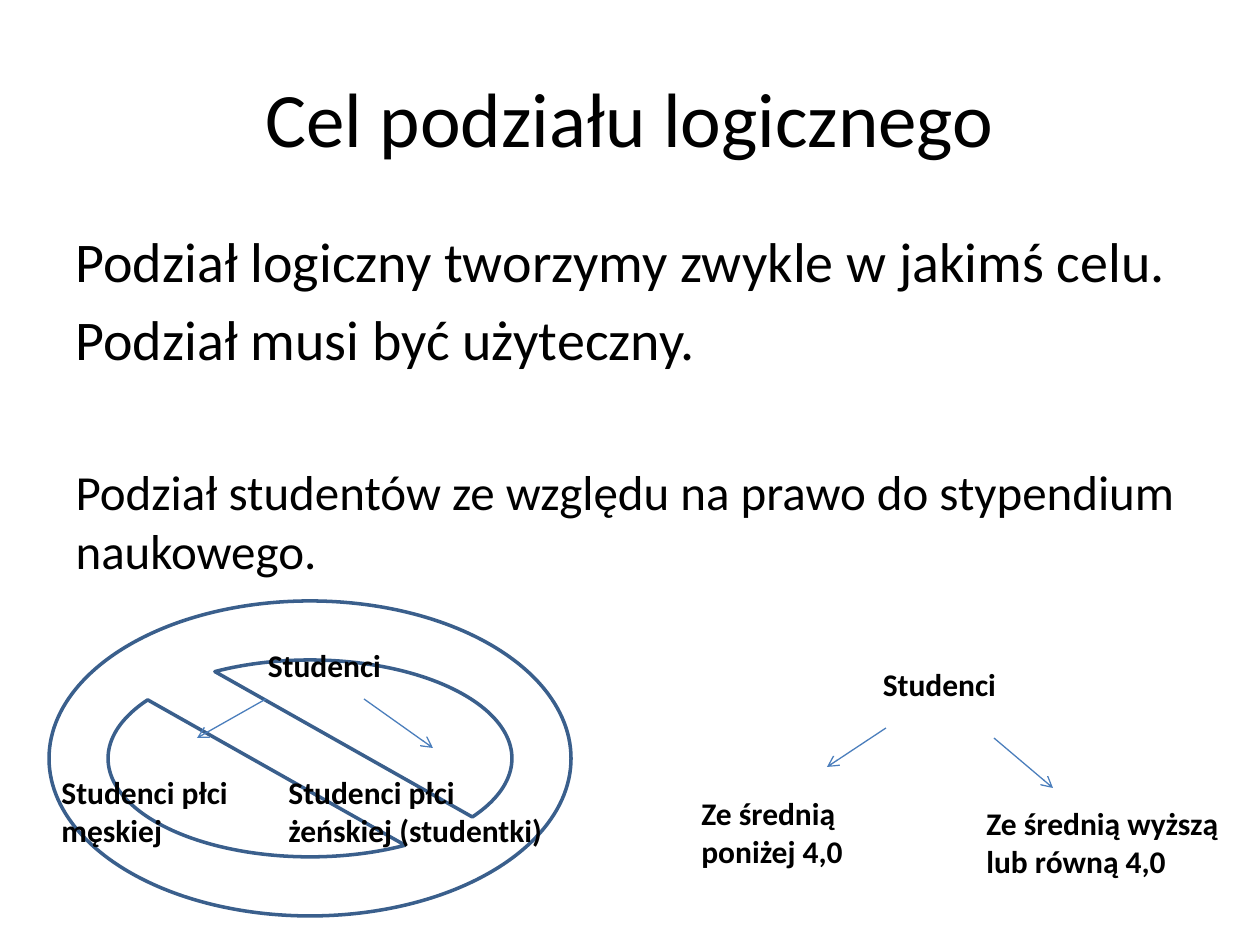
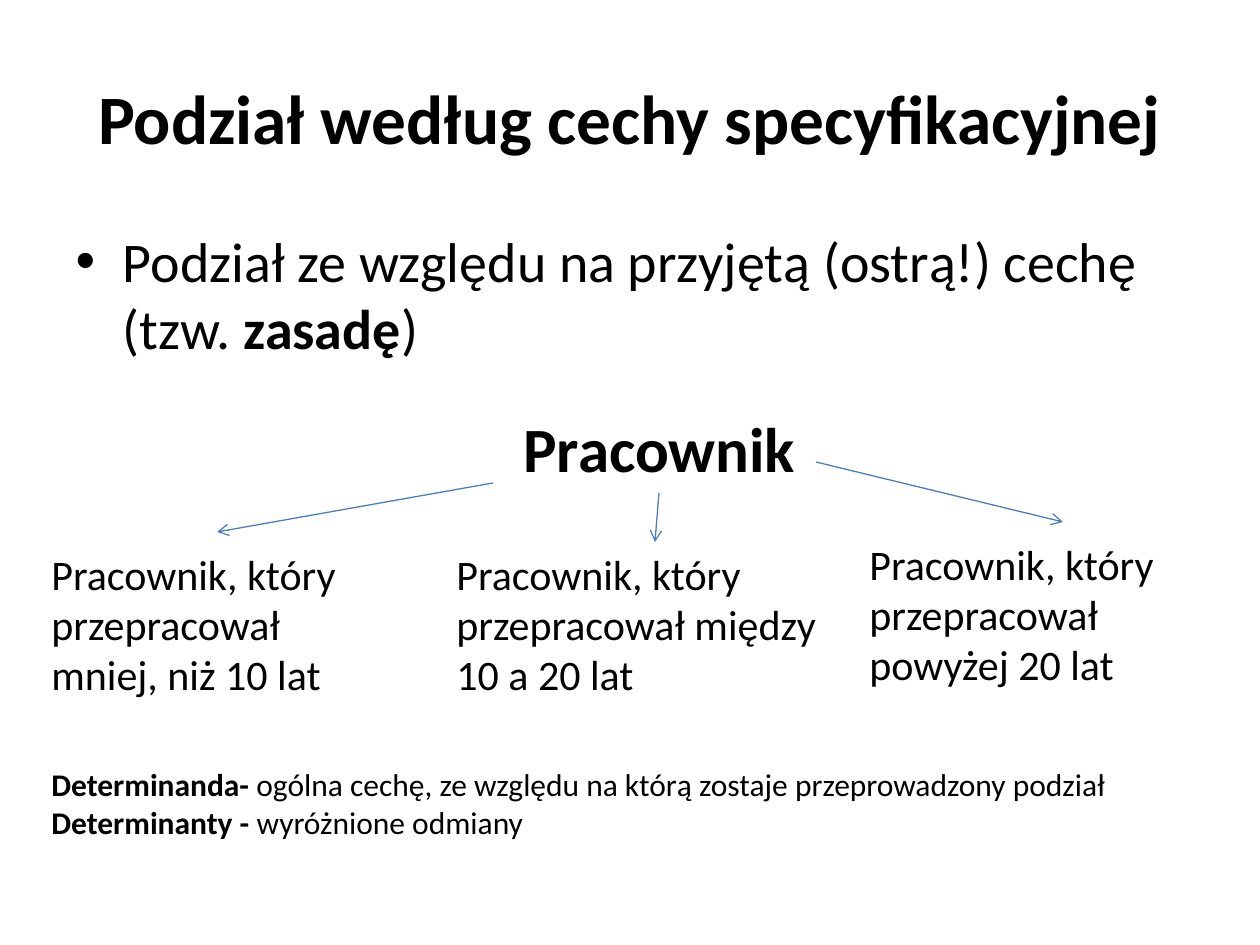
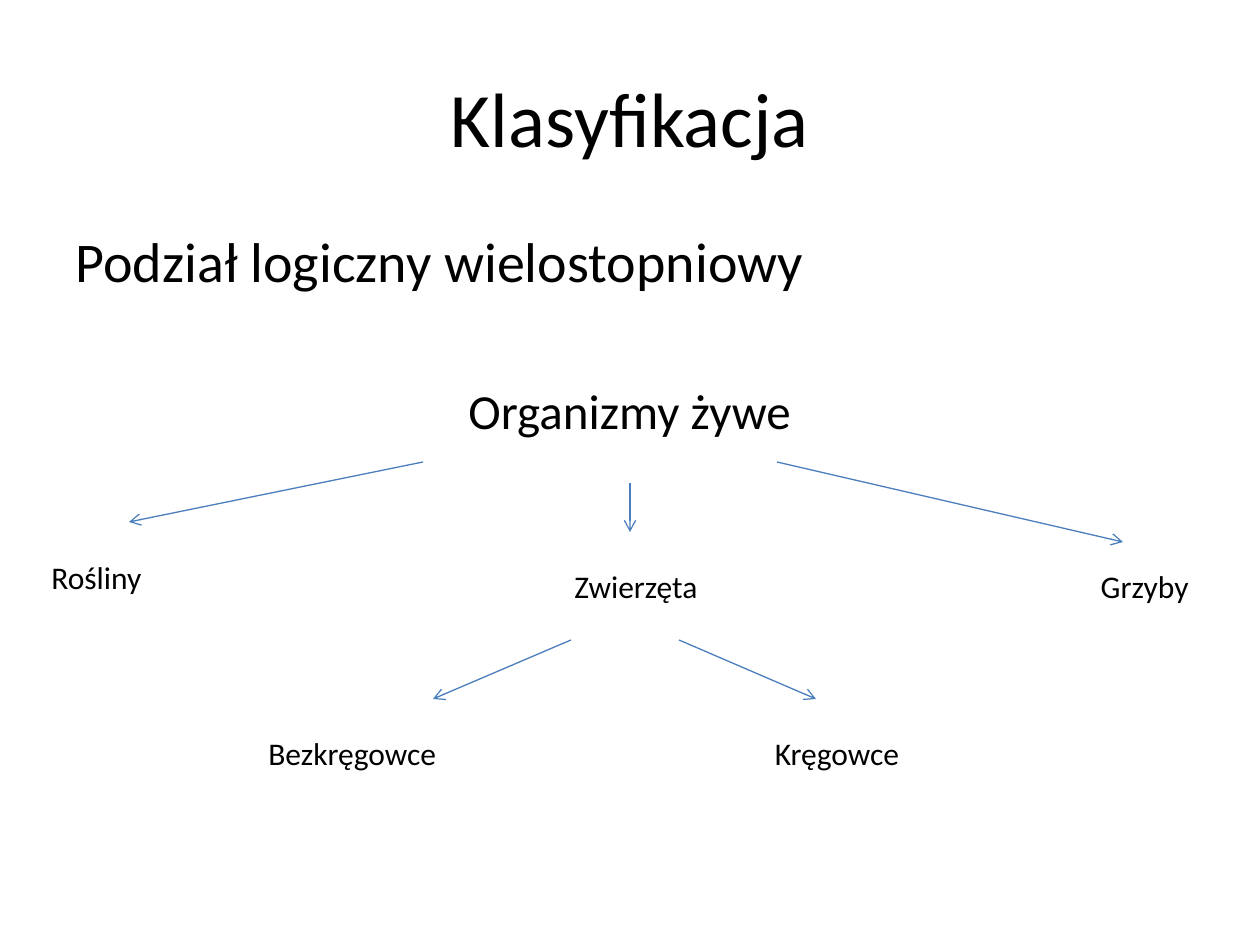
from lxml.etree import SubElement
from pptx import Presentation
from pptx.dml.color import RGBColor
from pptx.enum.shapes import MSO_CONNECTOR, MSO_SHAPE
from pptx.enum.text import MSO_ANCHOR, MSO_AUTO_SIZE, PP_ALIGN
from pptx.oxml.ns import qn
from pptx.util import Emu, Pt

FONT = "Calibri"
BLACK = RGBColor(0x00, 0x00, 0x00)
WHITE = RGBColor(0xFF, 0xFF, 0xFF)
ARROW_BLUE = RGBColor(0x4B, 0x7E, 0xBC)
SIGN_BLUE = RGBColor(0x3A, 0x5F, 0x8C)
PIXELS_PER_INCH = 126
TITLE_BOX = (63, 38, 1134, 157)
BODY_BOX = (63, 220, 1134, 624)


def px(length):
    """Turn whole pixels into EMU."""
    return Emu(round(length * 914400 / PIXELS_PER_INCH))


def place(shape, box):
    """Move and size a shape to a pixel box."""
    shape.left, shape.top, shape.width, shape.height = map(px, box)


def add_runs(paragraph, runs, size):
    """Add (text, bold) runs to a paragraph."""
    for text, bold in runs:
        run = paragraph.add_run()
        run.text = text
        font = run.font
        font.name, font.size, font.bold = FONT, Pt(size), bold
        font.color.rgb = BLACK


def add_lines(text_frame, lines, size, alignment=PP_ALIGN.LEFT):
    """Fill a text frame with one paragraph for each list of runs."""
    for index, runs in enumerate(lines):
        paragraph = text_frame.add_paragraph() if index else text_frame.paragraphs[0]
        paragraph.alignment = alignment
        add_runs(paragraph, runs, size)


def add_slide(presentation, title, size=44, bold=False):
    """Add a white slide with a centred title."""
    slide = presentation.slides.add_slide(presentation.slide_layouts[1])
    slide.background.fill.solid()
    slide.background.fill.fore_color.rgb = WHITE
    place(slide.shapes.title, TITLE_BOX)
    text_frame = slide.shapes.title.text_frame
    text_frame.auto_size = MSO_AUTO_SIZE.NONE
    text_frame.vertical_anchor = MSO_ANCHOR.MIDDLE
    add_lines(text_frame, [[(title, bold)]], size, PP_ALIGN.CENTER)
    return slide


def add_body(slide, items, bulleted=False):
    """Fill the body with (runs, size, space before) paragraphs."""
    body = slide.placeholders[1]
    place(body, BODY_BOX)
    text_frame = body.text_frame
    text_frame.auto_size = MSO_AUTO_SIZE.NONE
    for index, (runs, size, space_before) in enumerate(items):
        paragraph = text_frame.add_paragraph() if index else text_frame.paragraphs[0]
        if not bulleted:
            properties = paragraph._p.get_or_add_pPr()
            properties.set("marL", "0")
            properties.set("indent", "0")
            SubElement(properties, qn("a:buNone"))
        paragraph.space_before = Pt(space_before)
        add_runs(paragraph, runs, size)


def add_text(slide, box, lines, size=18, alignment=PP_ALIGN.LEFT):
    """Add a wrapping text box made of lines of runs."""
    shape = slide.shapes.add_textbox(*map(px, box))
    shape.text_frame.word_wrap = True
    shape.text_frame.auto_size = MSO_AUTO_SIZE.SHAPE_TO_FIT_TEXT
    add_lines(shape.text_frame, lines, size, alignment)


def add_label(slide, box, text, size=18, bold=False, alignment=PP_ALIGN.LEFT):
    """Add a label of a single run."""
    add_text(slide, box, [[(text, bold)]], size, alignment)


def add_arrows(slide, arrows):
    """Draw thin open-headed arrows from (x1, y1, x2, y2) tuples."""
    for ends in arrows:
        connector = slide.shapes.add_connector(MSO_CONNECTOR.STRAIGHT, *map(px, ends))
        connector.line.color.rgb = ARROW_BLUE
        connector.line.width = Pt(0.75)
        SubElement(connector.line._get_or_add_ln(), qn("a:tailEnd"), type="arrow")
        SubElement(connector._element.spPr, qn("a:effectLst"))


def add_forbidden_sign(slide, box):
    """Add an unfilled prohibition sign."""
    sign = slide.shapes.add_shape(MSO_SHAPE.NO_SYMBOL, *map(px, box))
    sign.shadow.inherit = False
    sign.fill.background()
    sign.line.color.rgb = SIGN_BLUE
    sign.line.width = Pt(2)


def build_purpose(presentation):
    """Build the slide on the purpose of division."""
    slide = add_slide(presentation, "Cel podziału logicznego")
    add_body(slide, [
        ([("Podział logiczny tworzymy zwykle w jakimś celu.", False)], 32, 0),
        ([("Podział musi być użyteczny.", False)], 32, 6.4),
        ([("Podział studentów ze względu na prawo do stypendium naukowego.", False)], 28, 51),
    ])
    add_forbidden_sign(slide, (49, 601, 522, 315))
    for box in [(29, 640, 591, 50), (738, 659, 403, 50)]:
        add_label(slide, box, "Studenci", bold=True, alignment=PP_ALIGN.CENTER)
    for box, text in [
        ((49, 767, 256, 89), "Studenci płci męskiej"),
        ((276, 767, 295, 89), "Studenci płci żeńskiej (studentki)"),
        ((689, 788, 256, 89), "Ze średnią poniżej 4,0"),
        ((974, 798, 286, 89), "Ze średnią wyższą lub równą 4,0"),
    ]:
        add_label(slide, box, text, bold=True)
    add_arrows(slide, [
        (266, 699, 197, 738), (364, 699, 433, 748),
        (886, 728, 827, 767), (994, 738, 1053, 788),
    ])


def build_feature_division(presentation):
    """Build the slide on division by a specifying feature."""
    slide = add_slide(presentation, "Podział według cechy specyfikacyjnej", 39.6, True)
    add_body(slide, [(
        [("Podział ze względu na przyjętą (ostrą!) cechę (tzw. ", False),
         ("zasadę", True), (")", False)], 32, 0,
    )], bulleted=True)
    add_label(slide, (59, 403, 1201, 89), "Pracownik", 36, True, PP_ALIGN.CENTER)
    for box, ending in [
        ((39, 542, 354, 165), "mniej, niż 10 lat"),
        ((444, 542, 423, 165), "między 10 a 20 lat"),
        ((857, 532, 354, 165), "powyżej 20 lat"),
    ]:
        add_label(slide, box, f"Pracownik, który przepracował {ending}", 24)
    add_arrows(slide, [
        (493, 483, 217, 532), (659, 493, 655, 542), (816, 462, 1063, 522),
    ])
    add_text(slide, (39, 759, 1191, 89), [
        [("Determinanda- ", True),
         ("ogólna cechę, ze względu na którą zostaje przeprowadzony podział", False)],
        [("Determinanty - ", True), ("wyróżnione odmiany", False)],
    ])


def build_classification(presentation):
    """Build the slide on multi-level division."""
    slide = add_slide(presentation, "Klasyfikacja")
    add_body(slide, [([("Podział logiczny wielostopniowy", False)], 32, 0)])
    add_label(slide, (29, 374, 1201, 72), "Organizmy żywe", 28, alignment=PP_ALIGN.CENTER)
    for box, text, alignment in [
        ((39, 552, 483, 50), "Rośliny", PP_ALIGN.LEFT),
        ((444, 561, 384, 50), "Zwierzęta", PP_ALIGN.CENTER),
        ((906, 561, 295, 50), "Grzyby", PP_ALIGN.RIGHT),
        ((256, 728, 315, 50), "Bezkręgowce", PP_ALIGN.LEFT),
        ((699, 728, 276, 50), "Kręgowce", PP_ALIGN.CENTER),
    ]:
        add_label(slide, box, text, alignment=alignment)
    add_arrows(slide, [
        (423, 462, 129, 522), (630, 483, 630, 532), (777, 462, 1123, 542),
        (571, 640, 433, 699), (679, 640, 816, 699),
    ])


def main():
    """Build and save the presentation."""
    presentation = Presentation()
    presentation.slide_width, presentation.slide_height = px(1260), px(945)
    build_purpose(presentation)
    build_feature_division(presentation)
    build_classification(presentation)
    presentation.save("out.pptx")


if __name__ == "__main__":
    main()
